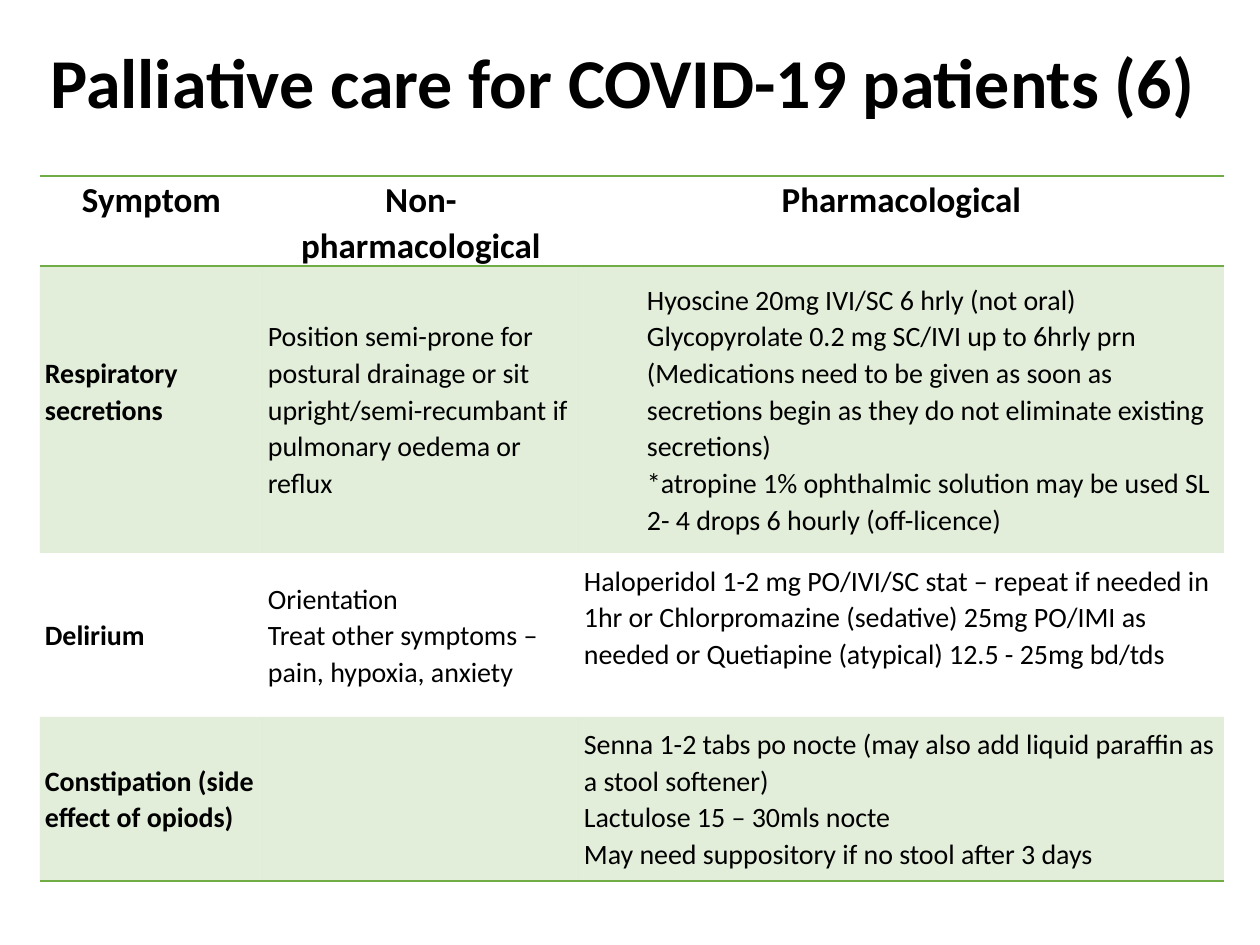
from lxml.etree import SubElement
from pptx import Presentation
from pptx.dml.color import RGBColor
from pptx.enum.text import MSO_ANCHOR, PP_ALIGN
from pptx.oxml import parse_xml
from pptx.oxml.ns import nsdecls, qn
from pptx.util import Pt

# Content
TITLE = "Palliative care for COVID-19 patients (6)"
HEADS = ["Symptom", "Non-pharmacological", "Pharmacological"]
ROWS = [
    (["Respiratory secretions"],
     ["Position semi-prone for postural drainage or sit upright/semi-recumbant "
      "if pulmonary oedema or reflux"],
     ["Hyoscine 20mg IVI/SC 6 hrly (not oral)",
      "Glycopyrolate 0.2 mg SC/IVI up to 6hrly prn",
      "(Medications need to be given as soon as secretions begin as they do not "
      "eliminate existing secretions)",
      "*atropine 1% ophthalmic solution may be used SL 2- 4 drops 6 hourly "
      "(off-licence)"]),
    (["Delirium"],
     ["Orientation", "Treat other symptoms – pain, hypoxia, anxiety"],
     ["Haloperidol 1-2 mg PO/IVI/SC stat – repeat if needed in 1hr or "
      "Chlorpromazine (sedative) 25mg PO/IMI as needed or Quetiapine "
      "(atypical) 12.5 - 25mg bd/tds"]),
    (["Constipation (side effect of opiods)"],
     [],
     ["Senna 1-2 tabs po nocte (may also add liquid paraffin as a stool softener)",
      "Lactulose 15 – 30mls nocte",
      "May need suppository if no stool after 3 days"]),
]
GRID = [[[head] for head in HEADS]] + ROWS

# Layout in px, 126 to the inch
WIDTHS = [223, 316, 645]
HEIGHTS = [81, 287, 164, 164]
LIFTED = {(1, 0): 36, (2, 2): 36}  # extra room under the text
INDENTS = {(1, 2): 63}

FONT = "Calibri"
BLACK = RGBColor(0, 0, 0)
GREEN = RGBColor(0x70, 0xAD, 0x47)
NO_STYLE = "{2D5ABB26-0587-4C30-8999-92F81FD0307C}"


def px(n):
    return round(n * 914400 / 126)


def write(para, text, size, bold, spacing):
    para.line_spacing = spacing
    run = para.add_run()
    run.text = text
    run.font.name = FONT
    run.font.size = Pt(size)
    run.font.bold = bold
    run.font.color.rgb = BLACK


def tint(cell):
    cell.fill.solid()
    cell.fill.fore_color.rgb = GREEN
    color = cell._tc.tcPr.find(".//" + qn("a:srgbClr"))
    SubElement(color, qn("a:alpha"), val="20000")


def rule(cell, sides):
    for i, side in enumerate(sides):
        cell._tc.get_or_add_tcPr().insert(i, parse_xml(
            f'<a:ln{side} {nsdecls("a")} w="12700"><a:solidFill>'
            f'<a:srgbClr val="{GREEN}"/></a:solidFill></a:ln{side}>'))


def fill_cell(cell, r, c, lines):
    head = r == 0
    cell.margin_left = cell.margin_right = px(5)
    cell.margin_top = 0
    cell.margin_bottom = px(LIFTED.get((r, c), 0))
    cell.vertical_anchor = MSO_ANCHOR.TOP if head else MSO_ANCHOR.MIDDLE
    frame = cell.text_frame
    for i, line in enumerate(lines):
        para = frame.add_paragraph() if i else frame.paragraphs[0]
        para.alignment = PP_ALIGN.CENTER if head else PP_ALIGN.LEFT
        if (r, c) in INDENTS:
            para._p.get_or_add_pPr().set("marL", str(px(INDENTS[r, c])))
        write(para, line, 20 if head else 16, head or c == 0, 1.07)
    if r % 2:
        tint(cell)
    else:
        cell.fill.background()
    if head:
        rule(cell, "TB")
    elif r == len(GRID) - 1:
        rule(cell, "B")


def main():
    deck = Presentation()
    deck.slide_width, deck.slide_height = px(1260), px(945)
    slide = deck.slides.add_slide(deck.slide_layouts[6])

    # Title
    box = slide.shapes.add_textbox(px(38), px(21), px(1184), px(130))
    frame = box.text_frame
    frame.word_wrap = True
    frame.vertical_anchor = MSO_ANCHOR.MIDDLE
    write(frame.paragraphs[0], TITLE, 40, True, 0.9)

    # Symptom table
    shape = slide.shapes.add_table(len(GRID), len(WIDTHS), px(40), px(176),
                                   px(sum(WIDTHS)), px(sum(HEIGHTS)))
    table = shape.table
    table.first_row = table.horz_banding = False
    table._tbl.tblPr.find(qn("a:tableStyleId")).text = NO_STYLE
    for col, width in zip(table.columns, WIDTHS):
        col.width = px(width)
    for r, (row, height) in enumerate(zip(GRID, HEIGHTS)):
        table.rows[r].height = px(height)
        for c, lines in enumerate(row):
            fill_cell(table.cell(r, c), r, c, lines)

    deck.save("out.pptx")


if __name__ == "__main__":
    main()
